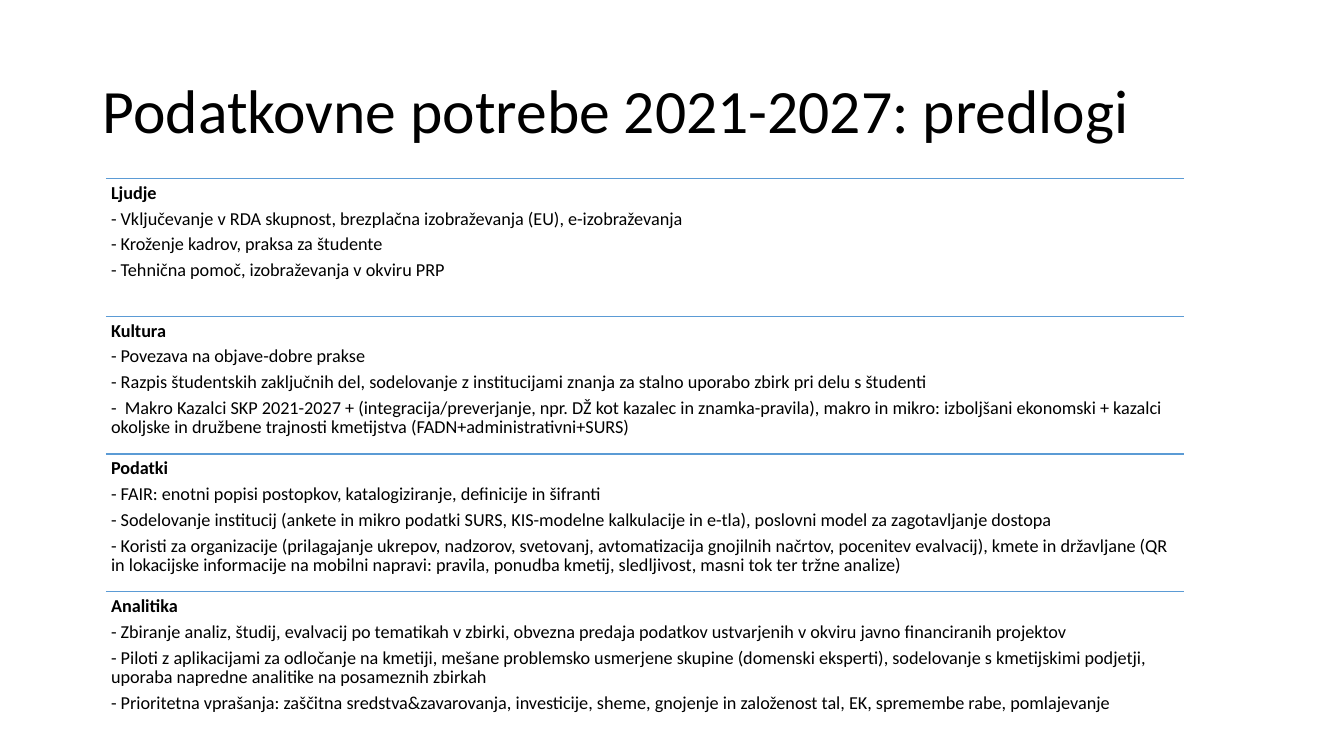
from lxml.etree import SubElement
from pptx import Presentation
from pptx.dml.color import RGBColor
from pptx.enum.shapes import MSO_CONNECTOR
from pptx.enum.text import MSO_ANCHOR
from pptx.oxml.ns import qn
from pptx.util import Cm, Pt

TITLE = "Podatkovne potrebe 2021-2027: predlogi"
PARTS = [
    ("Ljudje", [
        "- Vključevanje v RDA skupnost, brezplačna izobraževanja (EU), e-izobraževanja",
        "- Kroženje kadrov, praksa za študente",
        "- Tehnična pomoč, izobraževanja v okviru PRP",
    ]),
    ("Kultura", [
        "- Povezava na objave-dobre prakse",
        "- Razpis študentskih zaključnih del, sodelovanje z institucijami znanja "
        "za stalno uporabo zbirk pri delu s študenti",
        "-  Makro Kazalci SKP 2021-2027 + (integracija/preverjanje, npr. DŽ kot kazalec "
        "in znamka-pravila), makro in mikro: izboljšani ekonomski + kazalci okoljske "
        "in družbene trajnosti kmetijstva (FADN+administrativni+SURS)",
    ]),
    ("Podatki", [
        "- FAIR: enotni popisi postopkov, katalogiziranje, definicije in šifranti",
        "- Sodelovanje institucij (ankete in mikro podatki SURS, KIS-modelne kalkulacije "
        "in e-tla), poslovni model za zagotavljanje dostopa",
        "- Koristi za organizacije (prilagajanje ukrepov, nadzorov, svetovanj, "
        "avtomatizacija gnojilnih načrtov, pocenitev evalvacij), kmete in državljane "
        "(QR in lokacijske informacije na mobilni napravi: pravila, ponudba kmetij, "
        "sledljivost, masni tok ter tržne analize)",
    ]),
    ("Analitika", [
        "- Zbiranje analiz, študij, evalvacij po tematikah v zbirki, obvezna predaja "
        "podatkov ustvarjenih v okviru javno financiranih projektov",
        "- Piloti z aplikacijami za odločanje na kmetiji, mešane problemsko usmerjene "
        "skupine (domenski eksperti), sodelovanje s kmetijskimi podjetji, uporaba "
        "napredne analitike na posameznih zbirkah",
        "- Prioritetna vprašanja: zaščitna sredstva&zavarovanja, investicije, sheme, "
        "gnojenje in založenost tal, EK, spremembe rabe, pomlajevanje",
    ]),
]
COLORS = {"text": "000000", "rule": "5B9BD5"}
FONT = "Calibri"
LEFT, TOP, WIDTH, STEP = 2.67, 4.5, 27.18, 3.47
INSET = 0.13


def add_text(slide, box, lines, size, gap=0):
    """Add a wrapped text box with one paragraph per line."""
    frame = slide.shapes.add_textbox(*map(Cm, box)).text_frame
    frame.word_wrap = True
    frame.text = "\n".join(lines)
    for para in frame.paragraphs:
        para.line_spacing = 0.9
        para.space_after = Pt(gap)
        font = para.runs[0].font
        font.name, font.size = FONT, Pt(size)
        font.color.rgb = RGBColor.from_string(COLORS["text"])
    return frame


def add_rule(slide, top):
    """Add a thin level line above a part."""
    rule = slide.shapes.add_connector(
        MSO_CONNECTOR.STRAIGHT, Cm(LEFT), Cm(top), Cm(LEFT + WIDTH), Cm(top))
    rule.line.color.rgb = RGBColor.from_string(COLORS["rule"])
    rule.line.width = Pt(1)
    SubElement(rule._element.spPr, qn("a:effectLst"))


def add_part(slide, top, head, items):
    """Add a ruled part with a bold head and its items."""
    add_rule(slide, top)
    frame = add_text(slide, (LEFT, top, WIDTH, STEP), [head, *items], 13, 4.3)
    frame.margin_left = frame.margin_right = Cm(INSET)
    frame.margin_top = frame.margin_bottom = Cm(INSET)
    frame.paragraphs[0].runs[0].font.bold = True


def main():
    """Build the slide and save it."""
    deck = Presentation()
    deck.slide_width, deck.slide_height = Cm(33.87), Cm(19.05)
    slide = deck.slides.add_slide(deck.slide_layouts[6])
    title = add_text(slide, (2.34, 1.02, 29.21, 3.68), [TITLE], 44)
    title.vertical_anchor = MSO_ANCHOR.MIDDLE
    for row, (head, items) in enumerate(PARTS):
        add_part(slide, TOP + row * STEP, head, items)
    deck.save("out.pptx")


if __name__ == "__main__":
    main()
